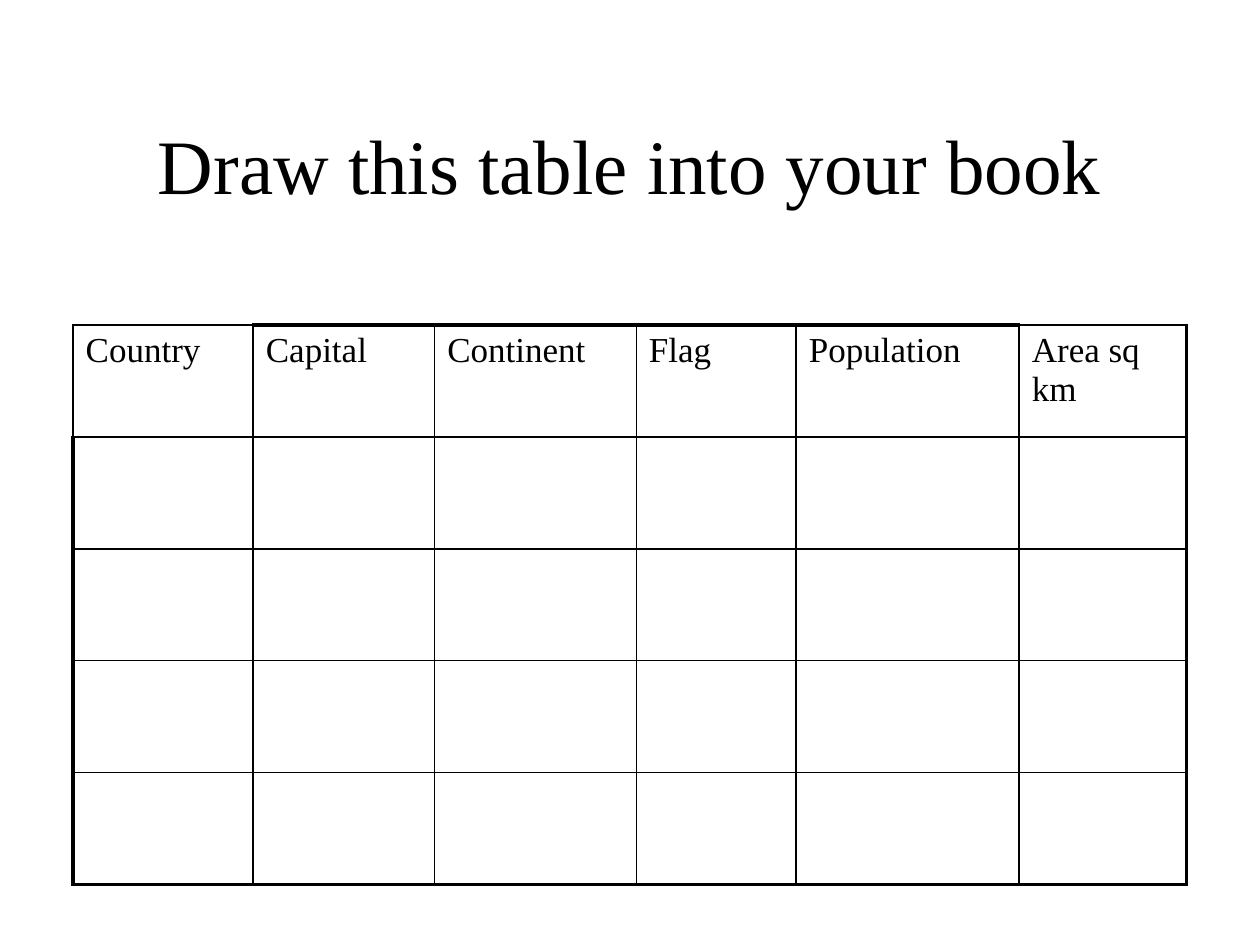
"""Build a slide with a blank country table for pupils to draw into their books."""
import lxml.etree
import pptx
import pptx.dml.color
import pptx.enum.text
import pptx.oxml.ns
import pptx.util

COLORS = {"ink": "000000", "paper": "FFFFFF"}
HEADINGS = ["Country", "Capital", "Continent", "Flag", "Population", "Area sq km"]
COLUMN_SHARES = [0.143, 0.144, 0.16, 0.127, 0.177, 0.133]
ROW_COUNT = 5
THIN, THICK = 1, 2.25


class SlideBuilder:
    font = "Times New Roman"
    title_size = 44
    cell_size = 20

    def __init__(self, presentation):
        self.width = presentation.slide_width
        self.height = presentation.slide_height
        self.slide = presentation.slides.add_slide(presentation.slide_layouts[6])

    def box(self, left, top, width, height):
        return (int(self.width * left), int(self.height * top),
                int(self.width * width), int(self.height * height))

    def color(self, name):
        return pptx.dml.color.RGBColor.from_string(COLORS[name])

    def style(self, font, size):
        font.name = self.font
        font.size = pptx.util.Pt(size)
        font.color.rgb = self.color("ink")

    def background(self):
        fill = self.slide.background.fill
        fill.solid()
        fill.fore_color.rgb = self.color("paper")

    def title(self, text, *shares):
        shape = self.slide.shapes.add_textbox(*self.box(*shares))
        frame = shape.text_frame
        frame.word_wrap = True
        frame.vertical_anchor = pptx.enum.text.MSO_ANCHOR.MIDDLE
        paragraph = frame.paragraphs[0]
        paragraph.alignment = pptx.enum.text.PP_ALIGN.CENTER
        run = paragraph.add_run()
        run.text = text
        self.style(run.font, self.title_size)

    def border(self, cell, widths):
        properties = cell._tc.get_or_add_tcPr()
        qualified = pptx.oxml.ns.qn
        for position, (side, width) in enumerate(widths.items()):
            line = lxml.etree.Element(qualified(f"a:ln{side}"), w=str(int(pptx.util.Pt(width))))
            fill = lxml.etree.SubElement(line, qualified("a:solidFill"))
            lxml.etree.SubElement(fill, qualified("a:srgbClr"), val=COLORS["ink"])
            properties.insert(position, line)

    def cell(self, cell, text, widths):
        cell.fill.background()
        self.border(cell, widths)
        paragraph = cell.text_frame.paragraphs[0]
        paragraph.space_before = pptx.util.Pt(0.2 * self.cell_size)
        self.style(paragraph.font, self.cell_size)
        if text:
            run = paragraph.add_run()
            run.text = text
            self.style(run.font, self.cell_size)

    def table(self, headings, row_count, column_shares, left, top, height):
        area = self.box(left, top, sum(column_shares), height)
        table = self.slide.shapes.add_table(row_count, len(headings), *area).table
        table.first_row = table.horz_banding = False
        for column, share in zip(table.columns, column_shares):
            column.width = int(self.width * share)
        last_row, last_column = row_count - 1, len(headings) - 1
        for row_index, row in enumerate(table.rows):
            row.height = int(self.height * height / row_count)
            for column_index, heading in enumerate(headings):
                header = row_index == 0
                thick_sides = {
                    "L": column_index == 0 and not header,
                    "R": column_index == last_column,
                    "T": header and 0 < column_index < last_column,
                    "B": row_index == last_row,
                }
                widths = {side: THICK if thick else THIN for side, thick in thick_sides.items()}
                self.cell(table.cell(row_index, column_index), heading if header else "", widths)


def main():
    presentation = pptx.Presentation()
    presentation.slide_width = pptx.util.Inches(10)
    presentation.slide_height = pptx.util.Inches(7.5)
    builder = SlideBuilder(presentation)
    builder.background()
    builder.title("Draw this table into your book", 0.075, 0.09, 0.85, 1 / 6)
    builder.table(HEADINGS, ROW_COUNT, COLUMN_SHARES, 0.058, 0.344, 0.592)
    presentation.save("out.pptx")


if __name__ == "__main__":
    main()
